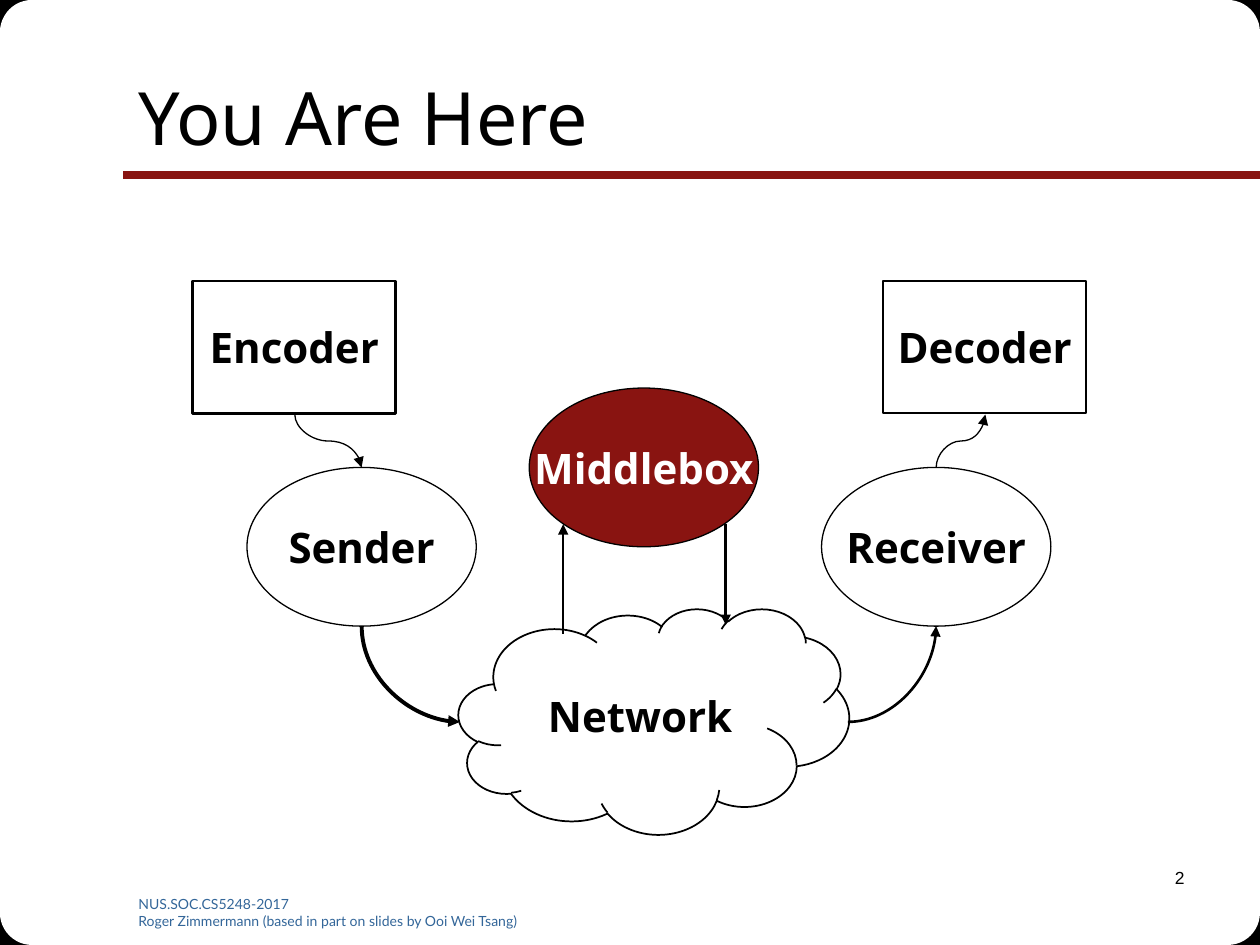
from lxml import etree
from pptx import Presentation
from pptx.dml.color import RGBColor
from pptx.enum.shapes import MSO_CONNECTOR, MSO_SHAPE
from pptx.enum.text import MSO_ANCHOR, PP_ALIGN
from pptx.oxml.ns import qn
from pptx.util import Inches, Pt

RECT, ROUND = MSO_SHAPE.RECTANGLE, MSO_SHAPE.ROUNDED_RECTANGLE
OVAL, CLOUD = MSO_SHAPE.OVAL, MSO_SHAPE.CLOUD
STRAIGHT, CURVE = MSO_CONNECTOR.STRAIGHT, MSO_CONNECTOR.CURVE
LEFT, CENTER, RIGHT = PP_ALIGN.LEFT, PP_ALIGN.CENTER, PP_ALIGN.RIGHT
TOP, MIDDLE = MSO_ANCHOR.TOP, MSO_ANCHOR.MIDDLE

BLACK = RGBColor(0x00, 0x00, 0x00)
WHITE = RGBColor(0xFF, 0xFF, 0xFF)
RED = RGBColor(0x89, 0x14, 0x11)
BLUE = RGBColor(0x33, 0x66, 0x99)

SLIDE_W, SLIDE_H = 10, 7.5
NODE_FONT = "Noto Sans"
BOX_SIZE, OVAL_SIZE = (1.61, 1.05), (1.82, 1.26)


def write(tf, lines, size, font, color, align=LEFT, anchor=TOP, bold=False):
    tf.vertical_anchor = anchor
    for i, line in enumerate(lines):
        p = tf.paragraphs[0] if i == 0 else tf.add_paragraph()
        p.text = line
        p.alignment = align
        p.font.size, p.font.name, p.font.bold = Pt(size), font, bold
        p.font.color.rgb = color


def add_text(s, box, lines, size, font, color, **style):
    sp = s.shapes.add_textbox(*map(Inches, box))
    sp.text_frame.word_wrap = True
    write(sp.text_frame, lines, size, font, color, **style)


def add_block(s, kind, box, fill=None, line=None):
    sp = s.shapes.add_shape(kind, *map(Inches, box))
    sp.shadow.inherit = False
    if fill is None:
        sp.fill.background()
    else:
        sp.fill.solid()
        sp.fill.fore_color.rgb = fill
    if line is None:
        sp.line.fill.background()
    else:
        sp.line.color.rgb = BLACK
        sp.line.width = Pt(line)
    return sp


def add_node(s, kind, box, label, fill=WHITE, line=0.75, color=BLACK):
    sp = add_block(s, kind, box, fill, line)
    sp.text_frame.word_wrap = kind == CLOUD
    write(sp.text_frame, [label], 24, NODE_FONT, color,
          align=CENTER, anchor=MIDDLE, bold=True)


def add_line(s, start, end, width, color=BLACK, kind=STRAIGHT, arrow=True):
    cn = s.shapes.add_connector(kind, *map(Inches, (*start, *end)))
    cn.line.color.rgb = color
    cn.line.width = Pt(width)
    if arrow:
        etree.SubElement(cn.line._get_or_add_ln(), qn("a:tailEnd"), type="triangle")
    etree.SubElement(cn._element.spPr, qn("a:effectLst"))
    return cn


def add_curve(s, start, end, width, preset, upright=True):
    """Curved arrow; an upright one leaves its start vertically."""
    (x1, y1), (x2, y2) = start, end
    if upright:
        # The frame is turned by 270 degrees about its centre
        cx, cy = (x1 + x2) / 2, (y1 + y2) / 2
        dx, dy = (y1 - y2) / 2, (x2 - x1) / 2
        start, end = (cx - dx, cy - dy), (cx + dx, cy + dy)
    cn = add_line(s, start, end, width, kind=CURVE)
    spPr = cn._element.spPr
    spPr.find(qn("a:prstGeom")).set("prst", preset)
    if upright:
        spPr.find(qn("a:xfrm")).set("rot", str(270 * 60000))


def add_frame(s, w, h):
    # Black corners, rounded off by white blocks
    for size, kind, fill, line in ((0.43, RECT, BLACK, 0.75),
                                   (1.53, ROUND, WHITE, None)):
        for x in (0, w - size):
            for y in (0, h - size):
                add_block(s, kind, (x, y, size, size), fill, line)


def add_header(s, x, y, w, h):
    add_line(s, (SLIDE_W, 1.39), (x - 0.02, 1.39), 4.5, RED, arrow=False)
    add_text(s, (x, y, w, h), ["You Are Here"], 42, NODE_FONT, BLACK, anchor=MIDDLE)


def add_footer(s, x, y, w, h):
    add_text(s, (x, y + 0.23, 3.67, 0.28),
             ["NUS.SOC.CS5248-2017",
              "Roger Zimmermann (based in part on slides by Ooi Wei Tsang)"],
             8, "Lato", BLUE)
    add_text(s, (x + w - 2.08, y, 2.08, h), ["2"], 10, "Arial", BLACK, align=RIGHT)


def add_diagram(s, x, y):
    def at(dx, dy, size=()):
        return (x + dx, y + dy, *size)

    # Nodes
    add_node(s, CLOUD, at(2.11, 2.6, (3.1, 1.79)), "Network", line=1)
    add_node(s, RECT, at(0, 0, BOX_SIZE), "Encoder", line=1.5)
    add_node(s, RECT, at(5.48, 0, BOX_SIZE), "Decoder", line=1)
    add_node(s, OVAL, at(0.43, 1.48, OVAL_SIZE), "Sender")
    add_node(s, OVAL, at(2.67, 0.85, OVAL_SIZE), "Middlebox", fill=RED, color=WHITE)
    add_node(s, OVAL, at(4.99, 1.48, OVAL_SIZE), "Receiver", fill=None)

    # Encoder to sender to network
    add_curve(s, at(0.81, 1.06), at(1.34, 1.48), 0.75, "curvedConnector3")
    add_curve(s, at(1.34, 2.74), at(2.12, 3.5), 2.25, "curvedConnector2")

    # Network to middlebox and back
    add_line(s, at(2.94, 2.8), at(2.94, 1.93), 1.5)
    add_line(s, at(4.23, 1.93), at(4.23, 2.73), 1.5)

    # Network to receiver to decoder
    add_curve(s, at(5.2, 3.5), at(5.9, 2.74), 1.5, "curvedConnector2", upright=False)
    add_curve(s, at(5.9, 1.48), at(6.29, 1.06), 0.75, "curvedConnector3")


def main():
    prs = Presentation()
    prs.slide_width, prs.slide_height = Inches(SLIDE_W), Inches(SLIDE_H)
    s = prs.slides.add_slide(prs.slide_layouts[6])
    add_frame(s, SLIDE_W, SLIDE_H)
    add_header(s, 1, 0.3, 8.5, 1.25)
    add_footer(s, 1, 6.83, 8.5, 0.5)
    add_diagram(s, 1.53, 2.23)
    prs.save("out.pptx")


if __name__ == "__main__":
    main()
